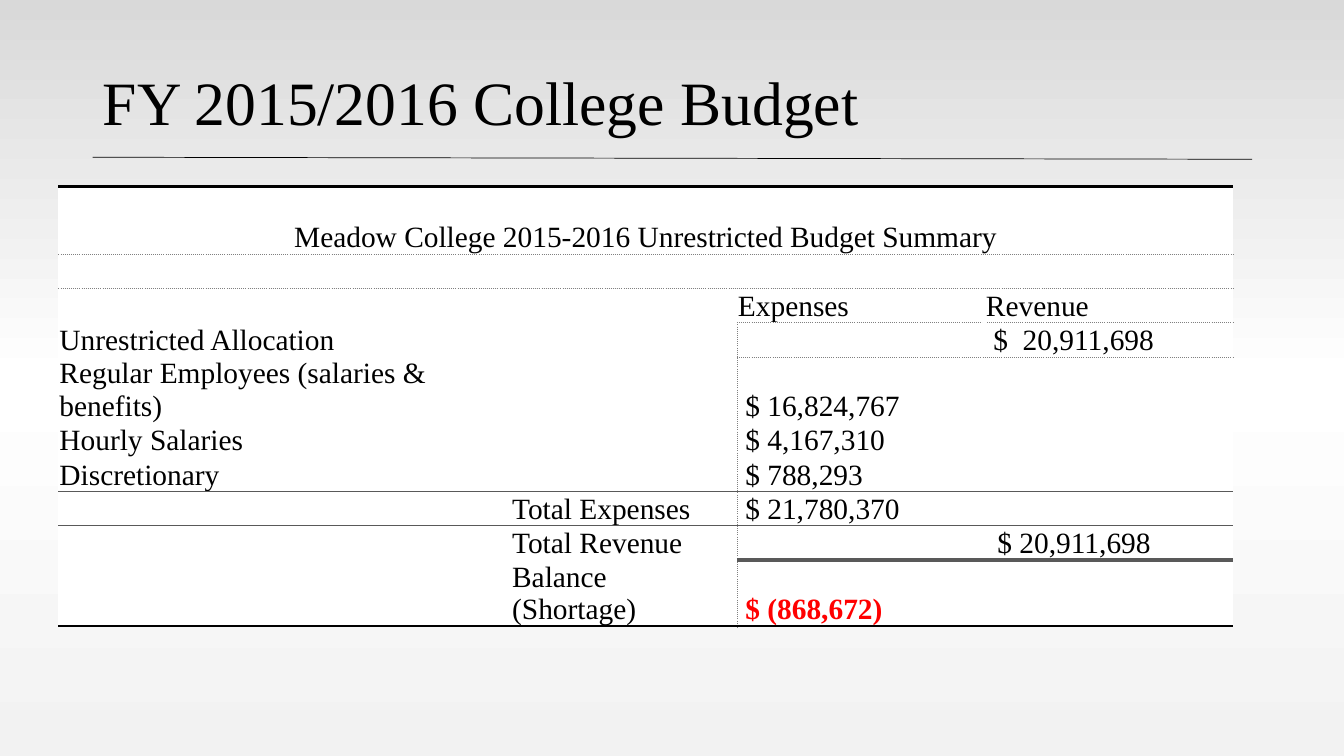
"""Build the college budget slide."""
import copy
import typing

import lxml.etree
import pptx
import pptx.dml.color
import pptx.enum.shapes
import pptx.enum.text
import pptx.oxml.ns
import pptx.util

RGB = pptx.dml.color.RGBColor
BLACK = RGB(0x00, 0x00, 0x00)
WHITE = RGB(0xFF, 0xFF, 0xFF)
GREY = RGB(0x80, 0x80, 0x80)
DARK = RGB(0x59, 0x59, 0x59)
RED = RGB(0xFF, 0x00, 0x00)
SKY = (RGB(0xD9, 0xD9, 0xD9), WHITE, RGB(0xF2, 0xF2, 0xF2))
FONT = "Times New Roman"
SIZE = 21
SCALE = 9144
PLAIN = "{2D5ABB26-0587-4C30-8999-92F81FD0307C}"
ALIGN = pptx.enum.text.PP_ALIGN
ANCHOR = pptx.enum.text.MSO_ANCHOR


class Edge(typing.NamedTuple):
    color: RGB
    width: float
    dash: str = "solid"


class Row(typing.NamedTuple):
    cells: tuple[str, str, str, str]
    base: Edge | None = None
    start: int = 0
    join: tuple[int, int] | None = (2, 3)
    indent: int = 0
    color: RGB = BLACK
    bold: bool = False
    align: ALIGN = ALIGN.LEFT
    height: int = 34


FINE = Edge(GREY, 0.25, "sysDot")
RULE = Edge(DARK, 1)
THICK = Edge(DARK, 3)
FRAME = Edge(BLACK, 2)
GAP = Edge(WHITE, 3)

COLS = (449, 224, 246, 246)
HEAD = 2
ALLOT = 3
ROWS = (
    Row(("Meadow College 2015-2016 Unrestricted Budget Summary", "", "", ""),
        FINE, join=(0, 3), align=ALIGN.CENTER, height=67),
    Row(("", "", "", ""), FINE, join=None),
    Row(("", "", "Expenses", "Revenue"), FINE, start=2, join=None),
    Row(("Unrestricted Allocation", "", "", " $  20,911,698"),
        FINE, start=2, join=None),
    Row(("Regular Employees (salaries & benefits)", "", " $ 16,824,767", "")),
    Row(("Hourly Salaries", "", " $ 4,167,310", "")),
    Row(("Discretionary", "", " $ 788,293", ""), RULE),
    Row(("", "Total Expenses", " $ 21,780,370", ""), RULE),
    Row(("", "Total Revenue", " $ 20,911,698", ""), THICK, start=2, indent=250),
    Row(("", "Balance (Shortage)", " $ (868,672)", ""), FRAME,
        color=RED, bold=True),
)


def px(size: int) -> pptx.util.Emu:
    """Turn pixels into EMU."""
    return pptx.util.Emu(size * SCALE)


def write(frame, text: str, *, size: float = SIZE, color: RGB = BLACK,
          bold: bool = False, align: ALIGN = ALIGN.LEFT, indent: int = 0,
          space: float = 1.0) -> None:
    """Put formatted text in a frame."""
    name = pptx.oxml.ns.qn
    para = frame.paragraphs[0]
    para.alignment = align
    para.line_spacing = space
    if indent:
        para._p.get_or_add_pPr().set("marL", str(px(indent)))
    if not text:
        end = lxml.etree.SubElement(para._p, name("a:endParaRPr"))
        end.set("sz", str(size * 100))
        lxml.etree.SubElement(end, name("a:latin")).set("typeface", FONT)
        return
    run = para.add_run()
    run.text = text
    run.font.name = FONT
    run.font.size = pptx.util.Pt(size)
    run.font.bold = bold
    run.font.color.rgb = color


def border(cell, side: str, edge: Edge | None) -> None:
    """Draw one side of a cell."""
    name = pptx.oxml.ns.qn
    line = lxml.etree.SubElement(cell._tc.get_or_add_tcPr(), name(f"a:ln{side}"))
    if edge is None:
        line.set("w", "0")
        lxml.etree.SubElement(line, name("a:noFill"))
        return
    line.set("w", str(pptx.util.Pt(edge.width)))
    fill = lxml.etree.SubElement(line, name("a:solidFill"))
    lxml.etree.SubElement(fill, name("a:srgbClr")).set("val", str(edge.color))
    lxml.etree.SubElement(line, name("a:prstDash")).set("val", edge.dash)


def level(row: int, col: int) -> Edge | None:
    """Find the edge below a cell, row -1 being the table top."""
    if row < 0:
        return FRAME
    return ROWS[row].base if col >= ROWS[row].start else None


def upright(row: int, col: int) -> Edge | None:
    """Find the edge left of a cell."""
    if col == 2 and row > HEAD:
        return FINE
    return GAP if col == 3 and row == ALLOT else None


def paint(slide) -> None:
    """Fill the background with the gradient."""
    fill = slide.background.fill
    fill.gradient()
    fill.gradient_angle = 270
    stops = slide.element.xpath(".//a:gsLst")[0]
    stops.append(copy.deepcopy(stops[0]))
    for num, (stop, color) in enumerate(zip(fill.gradient_stops, SKY)):
        stop.position = num / 2
        stop.color.rgb = color


def head(slide) -> None:
    """Set the title and the line under it."""
    title = slide.shapes.title
    title.left, title.top, title.width, title.height = map(px, (92, 40, 1150, 129))
    title.text_frame.vertical_anchor = ANCHOR.MIDDLE
    write(title.text_frame, "FY 2015/2016 College Budget", size=44, space=0.9)
    line = slide.shapes.add_connector(
        pptx.enum.shapes.MSO_CONNECTOR.STRAIGHT, *map(px, (92, 156, 1242, 158)))
    line.line.color.rgb = BLACK
    line.line.width = pptx.util.Pt(0.5)
    lxml.etree.SubElement(line._element.spPr, pptx.oxml.ns.qn("a:effectLst"))


def budget(slide) -> None:
    """Add the budget table."""
    high = sum(row.height for row in ROWS)
    shape = slide.shapes.add_table(
        len(ROWS), len(COLS), *map(px, (58, 185, sum(COLS), high)))
    table = shape.table
    table.first_row = table.horz_banding = False
    table._tbl.tblPr.xpath("a:tableStyleId")[0].text = PLAIN
    for col, width in enumerate(COLS):
        table.columns[col].width = px(width)
    for num, row in enumerate(ROWS):
        table.rows[num].height = px(row.height)
        for col, text in enumerate(row.cells):
            cell = table.cell(num, col)
            cell.margin_left = cell.margin_right = cell.margin_top = px(1)
            cell.margin_bottom = 0
            cell.vertical_anchor = ANCHOR.BOTTOM
            cost = col == 2
            write(cell.text_frame, text, align=row.align,
                  indent=row.indent if cost else 0,
                  color=row.color if cost else BLACK, bold=row.bold and cost)
            border(cell, "L", upright(num, col))
            border(cell, "R", upright(num, col + 1))
            border(cell, "T", level(num - 1, col))
            border(cell, "B", level(num, col))
            cell.fill.solid()
            cell.fill.fore_color.rgb = WHITE
        if row.join:
            first, last = row.join
            table.cell(num, first).merge(table.cell(num, last))


def main() -> None:
    """Build and save the deck."""
    deck = pptx.Presentation()
    deck.slide_width, deck.slide_height = px(1333), px(750)
    slide = deck.slides.add_slide(deck.slide_layouts[5])
    paint(slide)
    head(slide)
    budget(slide)
    deck.save("out.pptx")


if __name__ == "__main__":
    main()
